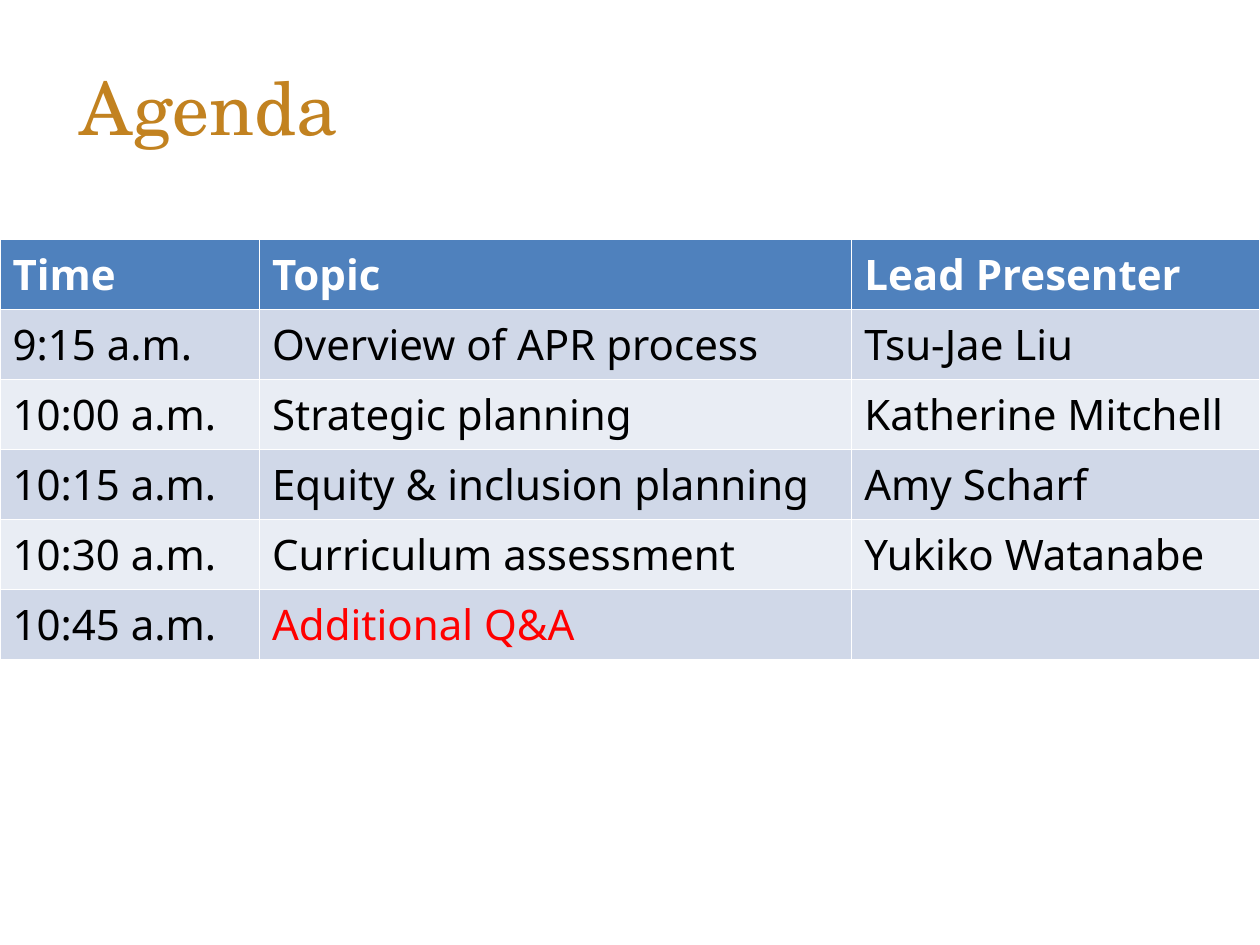
"""Build the agenda slide with its timetable."""
from dataclasses import dataclass

from pptx import Presentation
from pptx.dml.color import RGBColor
from pptx.enum.text import MSO_ANCHOR, PP_ALIGN
from pptx.util import Inches, Pt


@dataclass(frozen=True)
class Theme:
    heading_font: str = "TeX Gyre Schola"
    body_font: str = "Noto Sans"
    heading_size: int = 42
    body_size: int = 24
    gold: str = "C28220"
    header_fill: str = "4F81BD"
    band_fills: tuple = ("D0D8E8", "E9EDF4")
    header_text: str = "FFFFFF"
    body_text: str = "000000"
    highlight: str = "FF0000"


def style_text(paragraph, name, size, color, bold=False):
    font = paragraph.font
    font.name = name
    font.size = Pt(size)
    font.bold = bold
    font.color.rgb = RGBColor.from_string(color)


theme = Theme()
open_topic = "Additional Q&A"
agenda = [
    ("Time", "Topic", "Lead Presenter"),
    ("9:15 a.m.", "Overview of APR process", "Tsu-Jae Liu"),
    ("10:00 a.m.", "Strategic planning", "Katherine Mitchell"),
    ("10:15 a.m.", "Equity & inclusion planning", "Amy Scharf"),
    ("10:30 a.m.", "Curriculum assessment", "Yukiko Watanabe"),
    ("10:45 a.m.", open_topic, ""),
]
column_widths = (2.06, 4.7, 3.24)

presentation = Presentation()
presentation.slide_width = Inches(10)
presentation.slide_height = Inches(7.5)
slide = presentation.slides.add_slide(presentation.slide_layouts[5])

title = slide.shapes.title
title.left, title.top = Inches(0.53), Inches(0.21)
title.width, title.height = Inches(8.47), Inches(1.26)
title.text_frame.text = "Agenda"
title.text_frame.vertical_anchor = MSO_ANCHOR.MIDDLE
heading = title.text_frame.paragraphs[0]
heading.alignment = PP_ALIGN.LEFT
style_text(heading, theme.heading_font, theme.heading_size, theme.gold)

timetable = slide.shapes.add_table(
    len(agenda), len(column_widths), Inches(0), Inches(1.9), Inches(10), Inches(3)
).table
for column, width in zip(timetable.columns, column_widths):
    column.width = Inches(width)

for row_index, entries in enumerate(agenda):
    is_header = row_index == 0
    fill = theme.header_fill if is_header else theme.band_fills[(row_index - 1) % 2]
    for column_index, entry in enumerate(entries):
        cell = timetable.cell(row_index, column_index)
        cell.text = entry
        cell.fill.solid()
        cell.fill.fore_color.rgb = RGBColor.from_string(fill)
        color = theme.header_text if is_header else theme.body_text
        if entry == open_topic:
            color = theme.highlight
        style_text(cell.text_frame.paragraphs[0], theme.body_font,
                   theme.body_size, color, is_header)

presentation.save("out.pptx")
